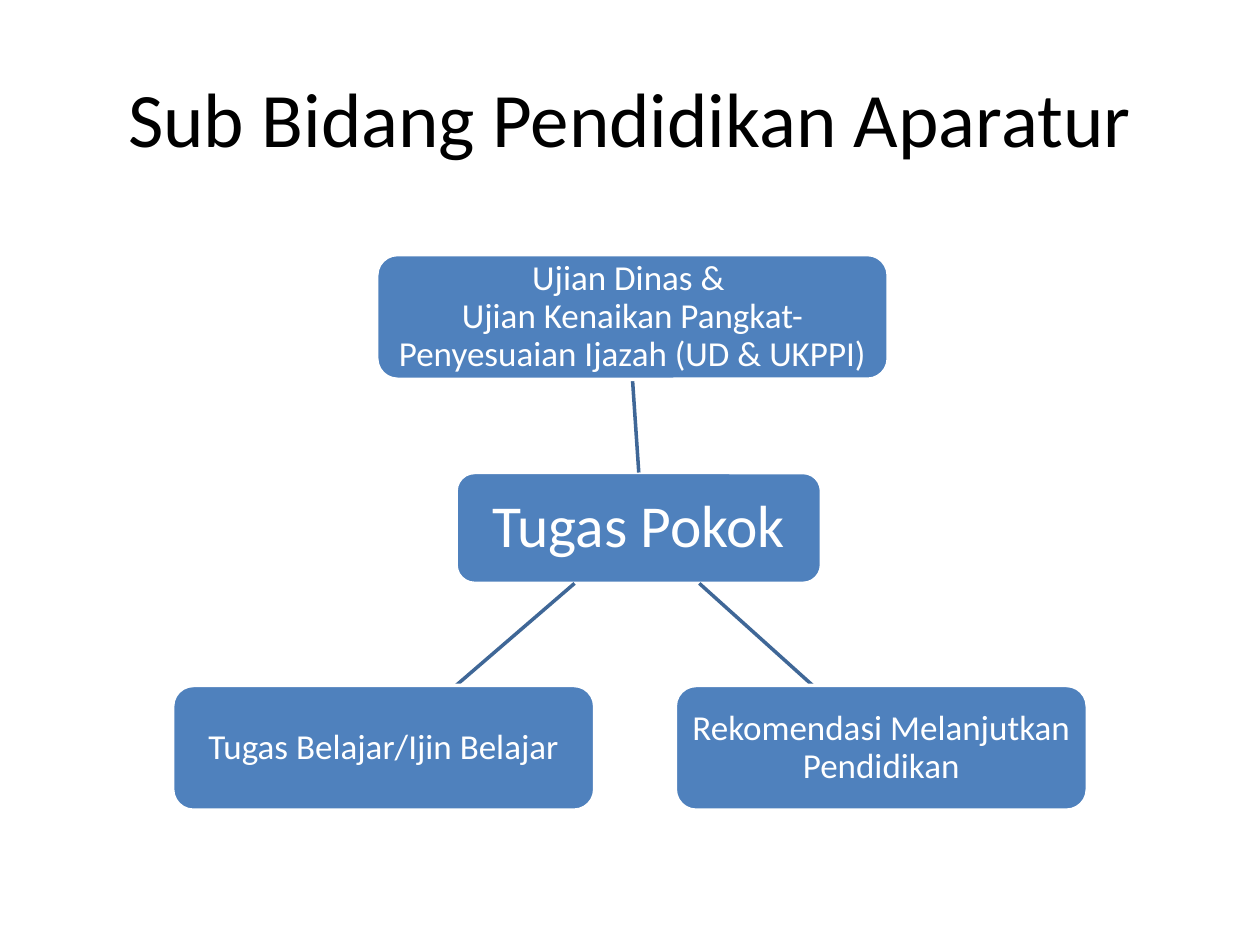
from lxml.etree import SubElement
from pptx import Presentation
from pptx.dml.color import RGBColor
from pptx.enum.shapes import MSO_CONNECTOR as Connector, MSO_SHAPE as Shape
from pptx.enum.text import MSO_ANCHOR as Anchor, PP_ALIGN as Align
from pptx.oxml.ns import qn
from pptx.util import Inches, Pt

BLUE, DARK_BLUE, WHITE, BLACK = "4F81BD", "3F6797", "FFFFFF", "000000"
TOP, BOTTOM = 0, 2


def color(value):
    """Turn a hex string into a colour."""
    return RGBColor.from_string(value)


def write(shape, text, size=20, fill=WHITE, inset=0.06, spacing=0.9):
    """Write one centred paragraph into a shape."""
    frame = shape.text_frame
    frame.word_wrap = True
    frame.vertical_anchor = Anchor.MIDDLE
    frame.margin_left = frame.margin_right = Inches(inset)
    frame.margin_top = frame.margin_bottom = Inches(inset)
    para = frame.paragraphs[0]
    para.text = text
    para.alignment = Align.CENTER
    para.line_spacing = spacing
    for span in para.runs:
        span.font.name = "Calibri"
        span.font.size = Pt(size)
        span.font.color.rgb = color(fill)


def add_title(page, box, text):
    """Place and format the title placeholder."""
    title = page.shapes.title
    title.left, title.top, title.width, title.height = map(Inches, box)
    write(title, text, size=44, fill=BLACK, inset=0.1, spacing=1.0)


def add_card(page, box, text, **style):
    """Draw a rounded blue card with its text."""
    card = page.shapes.add_shape(Shape.ROUNDED_RECTANGLE, *map(Inches, box))
    card.shadow.inherit = False
    card.fill.solid()
    card.fill.fore_color.rgb = color(BLUE)
    card.line.color.rgb = color(WHITE)
    card.line.width = Pt(2)
    write(card, text, **style)
    return card


def add_link(page, start, end):
    """Draw a straight line between two points."""
    link = page.shapes.add_connector(
        Connector.STRAIGHT, *map(Inches, (*start, *end)))
    link.line.color.rgb = color(DARK_BLUE)
    link.line.width = Pt(2)
    SubElement(link._element.spPr, qn("a:effectLst"))
    return link


def add_task_diagram(page, box):
    """Draw the main task and its three branches inside a box."""
    left, top, width, height = box
    card_height, core_height = 0.99, 0.88
    core_top = top + 1.73
    core_bottom = core_top + core_height
    lower_top = top + height - card_height
    core = add_card(page, (left + 2.25, core_top, 2.9, core_height),
                    "Tugas Pokok", size=34, inset=0.09)

    exam_link = add_link(page, (left + 3.7, core_top),
                         (left + 3.65, top + card_height))
    exam = add_card(page, (left + 1.62, top, 4.06, card_height),
                    "Ujian Dinas & \nUjian Kenaikan Pangkat-\n"
                    "Penyesuaian Ijazah (UD & UKPPI)")
    exam_link.begin_connect(core, TOP)
    exam_link.end_connect(exam, BOTTOM)

    lower_branches = [
        ("Rekomendasi Melanjutkan Pendidikan", width - 3.27, 3.27, 4.18, 5.08),
        ("Tugas Belajar/Ijin Belajar", 0, 3.35, 3.19, 2.25),
    ]
    for text, offset, card_width, start, end in lower_branches:
        add_link(page, (left + start, core_bottom), (left + end, lower_top))
        add_card(page, (left + offset, lower_top, card_width, card_height), text)


def main():
    """Build and save the deck."""
    deck = Presentation()
    deck.slide_width, deck.slide_height = Inches(10), Inches(7.5)
    page = deck.slides.add_slide(deck.slide_layouts[5])
    add_title(page, (0.5, 0.3, 9, 1.25), "Sub Bidang Pendidikan Aparatur")
    add_task_diagram(page, (1.37, 2.02, 7.26, 4.41))
    deck.save("out.pptx")


if __name__ == "__main__":
    main()
